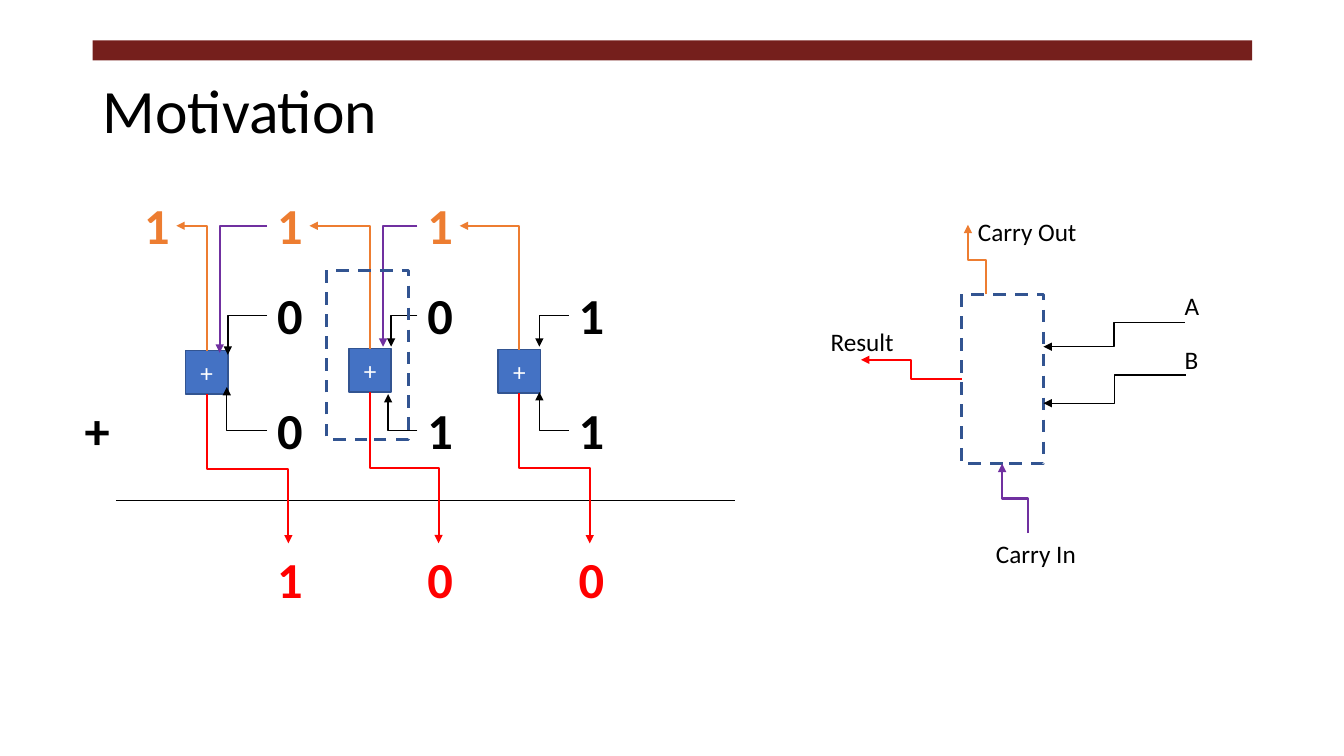
from dataclasses import dataclass
from typing import Optional

from lxml import etree
from pptx import Presentation
from pptx import util as u
from pptx.dml.color import RGBColor
from pptx.enum import dml, shapes, text
from pptx.oxml.ns import qn

PX = 9144  # 100 px to the inch
FONT = "Calibri"
BLACK, WHITE, RED = "000000", "FFFFFF", "FF0000"
ORANGE, PURPLE, MAROON = "ED7D31", "7030A0", "751F1C"
BLUE, NAVY = "4472C4", "325491"

DIGIT_WIDTH, DIGIT_HEIGHT = 42, 71
CARRY_ROW, A_ROW, B_ROW, RESULT_ROW = 188, 277, 391, 539
WIRE_DROP = 36  # from the top of a digit box to its wire
ADDER_WIDTH, ADDER_HEIGHT = 42, 43


@dataclass
class BitColumn:
    left: int
    digits: str  # A, B, result
    adder: tuple
    a_tip: tuple
    b_tip: tuple
    carry_out_left: int
    carry_tip: Optional[tuple] = None


COLUMNS = [
    BitColumn(265, "001", (184, 348), (226, 352), (225, 384), 133, (218, 350)),
    BitColumn(414, "010", (346, 346), (388, 344), (385, 391), 265, (380, 344)),
    BitColumn(564, "110", (494, 347), (535, 344), (535, 389), 414),
]


def px(*lengths):
    return [u.Emu(round(length * PX)) for length in lengths]


def color(hex_string):
    return RGBColor.from_string(hex_string)


def add_run(paragraph, words, size, hex_color, bold=False):
    run = paragraph.add_run()
    run.text = words
    run.font.name = FONT
    run.font.size = u.Pt(size)
    run.font.bold = bold
    run.font.color.rgb = color(hex_color)


def add_label(parent, words, box, size=18, hex_color=BLACK, bold=False, wrap=False):
    shape = parent.shapes.add_textbox(*px(*box))
    frame = shape.text_frame
    frame.word_wrap = wrap
    frame.auto_size = text.MSO_AUTO_SIZE.SHAPE_TO_FIT_TEXT
    add_run(frame.paragraphs[0], words, size, hex_color, bold)


def add_digit(parent, digit, left, top, hex_color=BLACK):
    box = (left, top, DIGIT_WIDTH, DIGIT_HEIGHT)
    add_label(parent, digit, box, 36, hex_color, bold=True, wrap=True)


def add_box(parent, box, fill=None, line=None, width=1, dashed=False):
    shape = parent.shapes.add_shape(shapes.MSO_SHAPE.RECTANGLE, *px(*box))
    shape.shadow.inherit = False
    if fill:
        shape.fill.solid()
        shape.fill.fore_color.rgb = color(fill)
    else:
        shape.fill.background()
    if line:
        shape.line.color.rgb = color(line)
        shape.line.width = u.Pt(width)
    else:
        shape.line.fill.background()
    if dashed:
        shape.line.dash_style = dml.MSO_LINE.DASH
    return shape


def add_adder(parent, left, top):
    shape = add_box(parent, (left, top, ADDER_WIDTH, ADDER_HEIGHT), BLUE, NAVY)
    frame = shape.text_frame
    frame.vertical_anchor = text.MSO_ANCHOR.MIDDLE
    paragraph = frame.paragraphs[0]
    paragraph.alignment = text.PP_ALIGN.CENTER
    add_run(paragraph, "+", 18, WHITE)


def add_line(parent, kind, start, end, hex_color, width):
    connector = parent.shapes.add_connector(kind, *px(*start, *end))
    connector.line.color.rgb = color(hex_color)
    connector.line.width = u.Pt(width)
    etree.SubElement(connector.element.spPr, qn("a:effectLst"))
    return connector


def add_wire(parent, start, end, hex_color=BLACK, width=1.5, upright=False, bends=2):
    """Draw an elbow arrow; an upright one leaves its start vertically."""
    first, last = start, end
    if upright:  # lay the route on its side about its centre, then turn it by 90°
        (x1, y1), (x2, y2) = start, end
        middle_x, middle_y = (x1 + x2) / 2, (y1 + y2) / 2
        half_x, half_y = (x2 - x1) / 2, (y2 - y1) / 2
        first = (middle_x - half_y, middle_y + half_x)
        last = (middle_x + half_y, middle_y - half_x)
    wire = add_line(parent, shapes.MSO_CONNECTOR.ELBOW, first, last, hex_color, width)
    properties = wire.element.spPr
    if upright:
        properties.find(qn("a:xfrm")).set("rot", str(90 * 60000))
    if bends == 1:
        properties.find(qn("a:prstGeom")).set("prst", "bentConnector2")
    etree.SubElement(properties.find(qn("a:ln")), qn("a:tailEnd"), type="triangle")


def add_title(slide):
    add_box(slide, (92, 40, 1150, 20), MAROON)
    frame = slide.shapes.add_textbox(*px(92, 40, 1150, 145)).text_frame
    frame.word_wrap = True
    frame.vertical_anchor = text.MSO_ANCHOR.MIDDLE
    frame.paragraphs[0].line_spacing = 0.9
    add_run(frame.paragraphs[0], "Motivation", 44, BLACK)


def add_column_wires(parent, column):
    adder_left, adder_top = column.adder
    adder_middle = adder_left + ADDER_WIDTH // 2
    carry_y = CARRY_ROW + WIRE_DROP
    inputs = [(A_ROW, column.a_tip), (B_ROW, column.b_tip)]
    for row, tip in inputs:
        add_wire(parent, (column.left, row + WIRE_DROP), tip, width=1, bends=1)
    add_wire(parent, (adder_middle, adder_top + ADDER_HEIGHT),
             (column.left + DIGIT_WIDTH // 2, RESULT_ROW), RED, upright=True)
    add_wire(parent, (adder_middle, adder_top),
             (column.carry_out_left + DIGIT_WIDTH, carry_y), ORANGE,
             upright=True, bends=1)
    if column.carry_tip:
        add_wire(parent, (column.left, carry_y), column.carry_tip, PURPLE, bends=1)


def add_addition(slide):
    group = slide.shapes.add_group_shape()
    add_line(group, shapes.MSO_CONNECTOR.STRAIGHT, (115, 496), (729, 496), BLACK, 0.5)
    add_digit(group, "+", 74, B_ROW)
    rows = [(A_ROW, BLACK), (B_ROW, BLACK), (RESULT_ROW, RED)]
    for column in COLUMNS:
        for digit, (top, hex_color) in zip(column.digits, rows):
            add_digit(group, digit, column.left, top, hex_color)
        add_digit(group, "1", column.carry_out_left, CARRY_ROW, ORANGE)
        add_adder(group, *column.adder)
    for column in COLUMNS:
        add_column_wires(group, column)
    add_box(slide, (324, 268, 81, 168), line=NAVY, width=2.25, dashed=True)


def add_full_adder(slide):
    group = slide.shapes.add_group_shape()
    add_box(group, (954, 292, 81, 168), line=NAVY, width=2.25, dashed=True)
    add_wire(group, (978, 292), (960, 223), ORANGE, upright=True)
    add_wire(group, (954, 376), (854, 357), RED)
    add_wire(group, (1175, 320), (1035, 344), width=1)
    add_wire(group, (1176, 372), (1035, 400), width=1)
    add_wire(group, (1020, 529), (994, 460), PURPLE, upright=True)
    for words, left, top, width in [
        ("A", 1165, 283, 35),
        ("B", 1165, 337, 35),
        ("Carry Out", 960, 210, 119),
        ("Carry In", 978, 529, 100),
        ("Result", 814, 319, 83),
    ]:
        add_label(group, words, (left, top, width, 40))


def main():
    presentation = Presentation()
    presentation.slide_width, presentation.slide_height = px(1333, 750)
    slide = presentation.slides.add_slide(presentation.slide_layouts[6])
    add_title(slide)
    add_addition(slide)
    add_full_adder(slide)
    presentation.save("out.pptx")


if __name__ == "__main__":
    main()
